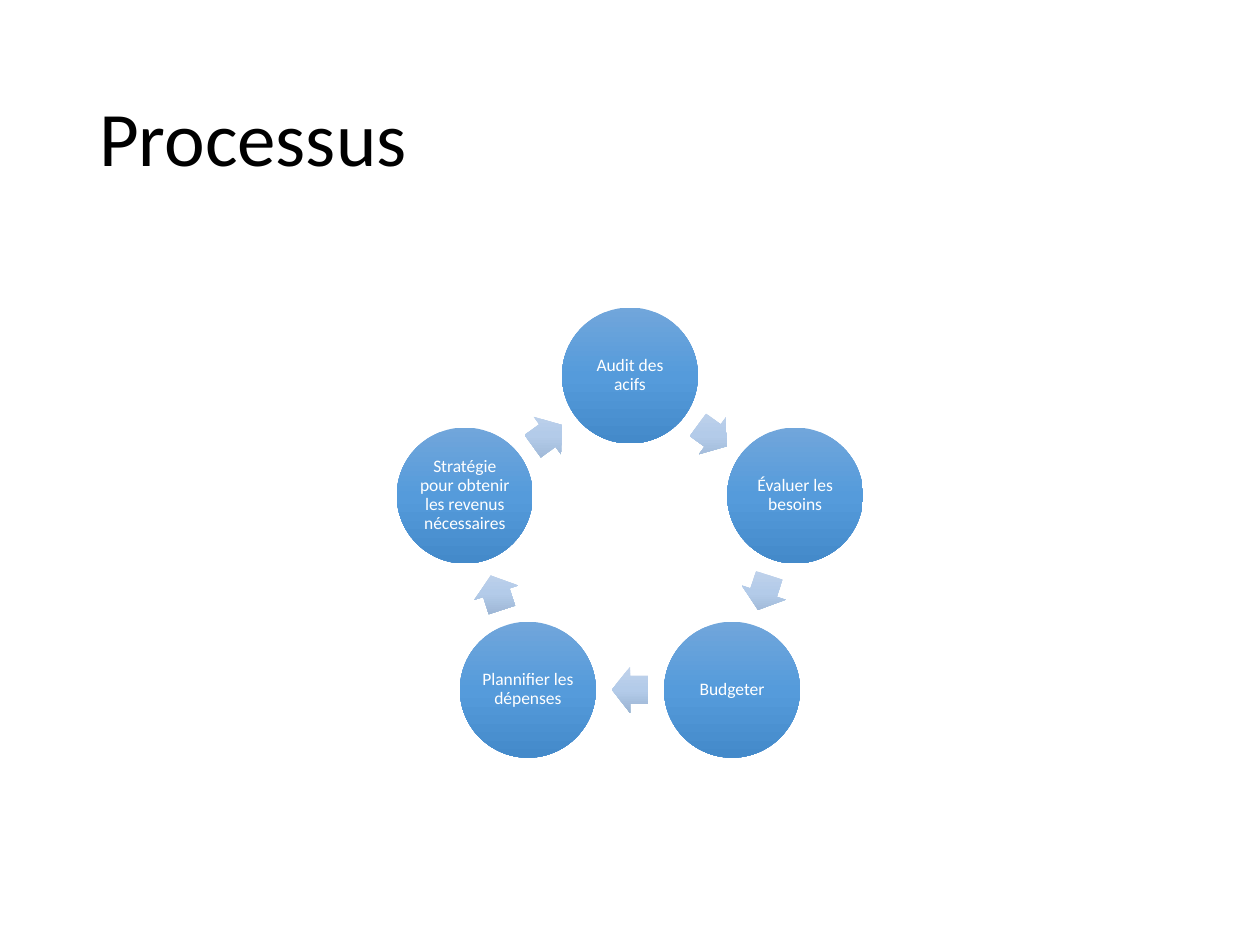
import copy
import math

from pptx import Presentation
from pptx import util as u
from pptx.dml.color import RGBColor
from pptx.enum import shapes, text
from pptx.oxml import ns

COLORS = {
    "title": "000000",
    "label": "FFFFFF",
    "step": ["71A6DB", "559BDB", "448ACA"],
    "arrow": ["C0D2EB", "B3CBE9", "9BB4D3"],
}
STEPS = [
    "Audit des acifs",
    "Évaluer les besoins",
    "Budgeter",
    "Plannifier les dépenses",
    "Stratégie pour obtenir les revenus nécessaires",
]
STEP_SIZE = u.Cm(2.74)
ARROW_WIDTH, ARROW_HEIGHT = u.Cm(0.73), u.Cm(0.93)


def write_text(frame, wording, size, color):
    """Fill a text frame with one middle-anchored paragraph and return it."""
    frame.word_wrap = True
    frame.vertical_anchor = text.MSO_ANCHOR.MIDDLE
    paragraph = frame.paragraphs[0]
    paragraph.text = wording
    paragraph.line_spacing = 0.9
    paragraph.font.name = "Calibri"
    paragraph.font.size = u.Pt(size)
    paragraph.font.color.rgb = RGBColor.from_string(color)
    return paragraph


def add_shaded(slide, kind, center_x, center_y, width, height, colors):
    """Add a borderless shape around a center, shaded from top to bottom."""
    shape = slide.shapes.add_shape(
        kind, round(center_x - width / 2), round(center_y - height / 2), width, height
    )
    shape.shadow.inherit = False
    shape.line.fill.background()
    shape.fill.gradient()
    shape.fill.gradient_angle = 270
    gradient = shape._element.spPr.find(ns.qn("a:gradFill"))
    gradient.set("rotWithShape", "0")
    stops = gradient.find(ns.qn("a:gsLst"))
    stops.insert(1, copy.deepcopy(stops[0]))
    for stop, position, color in zip(shape.fill.gradient_stops, (0, 0.5, 1), colors):
        stop.position = position
        stop.color.rgb = RGBColor.from_string(color)
    return shape


def add_title(slide, left, top, width, height):
    """Place the slide title in its box."""
    title = slide.shapes.add_textbox(left, top, width, height)
    write_text(title.text_frame, "Processus", 44, COLORS["title"])


def add_step(slide, center_x, center_y, wording):
    """Place one labelled circle of the cycle."""
    step = add_shaded(slide, shapes.MSO_SHAPE.OVAL, center_x, center_y,
                      STEP_SIZE, STEP_SIZE, COLORS["step"])
    frame = step.text_frame
    frame.margin_left = frame.margin_right = u.Cm(0.03)
    frame.margin_top = frame.margin_bottom = u.Cm(0.03)
    label = write_text(frame, wording, 10, COLORS["label"])
    label.alignment = text.PP_ALIGN.CENTER


def add_cycle(slide, left, top, width):
    """Place the steps clockwise on a ring with an arrow after each one."""
    turn = math.tau / len(STEPS)
    radius = (width - STEP_SIZE) / 2 / math.sin(turn)
    center_x = left + width / 2
    center_y = top + STEP_SIZE / 2 + radius

    def on_ring(angle, distance):
        return center_x + distance * math.sin(angle), center_y - distance * math.cos(angle)

    for index, wording in enumerate(STEPS):
        angle = index * turn
        add_step(slide, *on_ring(angle, radius), wording)
        halfway = angle + turn / 2
        arrow = add_shaded(slide, shapes.MSO_SHAPE.RIGHT_ARROW,
                           *on_ring(halfway, radius * math.cos(turn / 2)),
                           ARROW_WIDTH, ARROW_HEIGHT, COLORS["arrow"])
        arrow.adjustments[0] = 0.6
        arrow.adjustments[1] = 0.5
        arrow.rotation = math.degrees(halfway)


def main():
    """Build and save the process slide."""
    deck = Presentation()
    deck.slide_width, deck.slide_height = u.Cm(25.4), u.Cm(19.05)
    slide = deck.slides.add_slide(deck.slide_layouts[6])
    add_title(slide, u.Cm(1.75), u.Cm(1.01), u.Cm(21.91), u.Cm(3.68))
    add_cycle(slide, u.Cm(8), u.Cm(6.2), u.Cm(9.4))
    deck.save("out.pptx")


if __name__ == "__main__":
    main()
